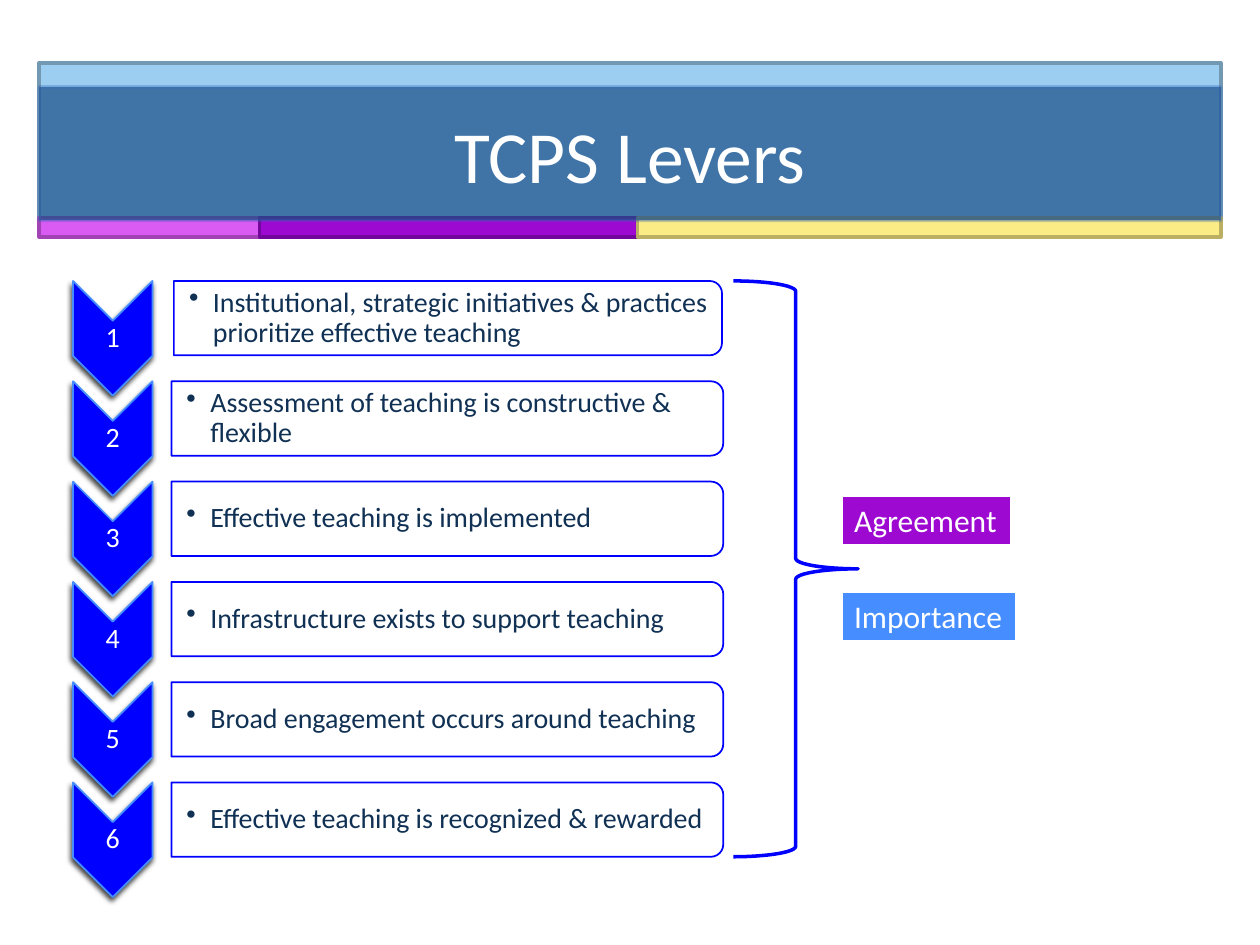
from lxml.etree import SubElement
from pptx import Presentation
from pptx.dml.color import RGBColor
from pptx.enum.shapes import MSO_SHAPE
from pptx.enum.text import MSO_ANCHOR, MSO_AUTO_SIZE, PP_ALIGN
from pptx.oxml.ns import qn
from pptx.util import Inches, Pt

TITLE = "TCPS Levers"
LEVERS = [
    "Institutional, strategic initiatives & practices prioritize effective teaching",
    "Assessment of teaching is constructive & flexible",
    "Effective teaching is implemented",
    "Infrastructure exists to support teaching",
    "Broad engagement occurs around teaching",
    "Effective teaching is recognized & rewarded",
]
# text, top, width, fill
RATINGS = [("Agreement", 3.93, 1.35, "9D09D1"), ("Importance", 4.69, 1.39, "468EFF")]
# width, fill, line
STRIPES = [(1.75, "DA5AF4", "A143B5"), (3, "9D09D1", "74079B"), (4.63, "FBEC85", "BAAF62")]

BLUE, WHITE, NAVY = "0000FF", "FFFFFF", "103154"
BANNER_LEFT, BANNER_WIDTH = 0.31, 9.38
FIRST_TOP, LAST_TOP = 2.23, 6.21
PITCH = (LAST_TOP - FIRST_TOP) / (len(LEVERS) - 1)
CHEVRON_LEFT, CHEVRON_WIDTH, CHEVRON_HEIGHT = 0.58, 0.63, 0.91
BAR_RIGHT, BAR_HEIGHT = 5.74, 0.59
SMALL_INSETS = (0.01, 0.01, 0.01, 0.01)


def rgb(color):
    return RGBColor.from_string(color)


def set_alpha(fill_element, percent):
    color = next(fill_element.iter(qn("a:srgbClr")))
    SubElement(color, qn("a:alpha"), val=str(percent * 1000))


def add_box(kind, left, top, width, height, fill=None, line=BLUE, weight=2,
            fill_alpha=None, line_alpha=None, quarter_turn=False):
    """Place a preset shape; the box is the one seen after any quarter turn."""
    if quarter_turn:
        left, top = left + (width - height) / 2, top + (height - width) / 2
        width, height = height, width
    box = slide.shapes.add_shape(kind, Inches(left), Inches(top), Inches(width), Inches(height))
    box.shadow.inherit = False
    box.rotation = 90 if quarter_turn else 0
    if fill:
        box.fill.solid()
        box.fill.fore_color.rgb = rgb(fill)
    else:
        box.fill.background()
    box.line.color.rgb = rgb(line)
    box.line.width = Pt(weight)
    properties = box.element.spPr
    if fill_alpha:
        set_alpha(properties.find(qn("a:solidFill")), fill_alpha)
    if line_alpha:
        set_alpha(properties.find(qn("a:ln")), line_alpha)
    return box


def add_shadow(box):
    effects = box.element.spPr.find(qn("a:effectLst"))
    shadow = SubElement(effects, qn("a:outerShdw"), blurRad=str(Pt(3)), dist=str(Pt(2)),
                        dir=str(110 * 60000), rotWithShape="0")
    color = SubElement(shadow, qn("a:srgbClr"), val="000000")
    SubElement(color, qn("a:alpha"), val="75000")


def write(box, text, size=16, color=WHITE, align=PP_ALIGN.LEFT, anchor=MSO_ANCHOR.MIDDLE,
          insets=(0.1, 0.05, 0.1, 0.05), spacing=None, bullet=False, wrap=True):
    frame = box.text_frame
    frame.word_wrap = wrap
    frame.vertical_anchor = anchor
    frame.margin_left, frame.margin_top, frame.margin_right, frame.margin_bottom = map(Inches, insets)
    paragraph = frame.paragraphs[0]
    paragraph.alignment = align
    paragraph.line_spacing = spacing
    run = paragraph.add_run()
    run.text = text
    run.font.name = "Calibri"
    run.font.size = Pt(size)
    run.font.color.rgb = rgb(color)
    if bullet:
        properties = paragraph._p.get_or_add_pPr()
        properties.set("marL", str(Inches(0.19)))
        properties.set("indent", str(Inches(-0.19)))
        SubElement(properties, qn("a:buChar"), char="•")


def add_label(left, top, width, height, text, **style):
    label = slide.shapes.add_textbox(Inches(left), Inches(top), Inches(width), Inches(height))
    write(label, text, spacing=0.9, **style)


def add_banner():
    add_box(MSO_SHAPE.RECTANGLE, BANNER_LEFT, 0.5, BANNER_WIDTH, 1.24, "9CCEF1", "7398B2")
    left = BANNER_LEFT
    for width, fill, line in STRIPES:
        add_box(MSO_SHAPE.RECTANGLE, left, 1.73, width, 0.15, fill, line)
        left += width
    title = add_box(MSO_SHAPE.RECTANGLE, BANNER_LEFT, 0.69, BANNER_WIDTH, 1.06, "1A4F88", "3469BD",
                    fill_alpha=70, line_alpha=30)
    write(title, TITLE, size=42, align=PP_ALIGN.CENTER)


def add_lever(index, text):
    top = FIRST_TOP + index * PITCH
    chevron = add_box(MSO_SHAPE.CHEVRON, CHEVRON_LEFT, top, CHEVRON_WIDTH, CHEVRON_HEIGHT,
                      BLUE, "468EFF", 1, quarter_turn=True)
    add_shadow(chevron)
    add_label(CHEVRON_LEFT, top + 0.32, CHEVRON_WIDTH, 0.27, str(index + 1),
              align=PP_ALIGN.CENTER, insets=SMALL_INSETS)
    bar_left, bar_right = (1.38, BAR_RIGHT - 0.01) if index == 0 else (1.36, BAR_RIGHT)
    bar_width = bar_right - bar_left
    add_box(MSO_SHAPE.ROUND_2_SAME_RECTANGLE, bar_left, top, bar_width, BAR_HEIGHT,
            WHITE, BLUE, 1, fill_alpha=90, quarter_turn=True)
    add_label(bar_left, top + 0.03, bar_width - 0.03, BAR_HEIGHT - 0.06, text, color=NAVY,
              insets=(0.12, 0.01, 0.01, 0.01), bullet=True)


presentation = Presentation()
presentation.slide_width, presentation.slide_height = Inches(10), Inches(7.5)
slide = presentation.slides.add_slide(presentation.slide_layouts[6])

add_banner()
for index, lever in enumerate(LEVERS):
    add_lever(index, lever)
add_box(MSO_SHAPE.RIGHT_BRACE, 5.82, FIRST_TOP, 0.99, 4.57)
for text, top, width, fill in RATINGS:
    rating = add_box(MSO_SHAPE.RECTANGLE, 6.68, top, width, 0.4, fill, WHITE)
    write(rating, text, size=18, anchor=MSO_ANCHOR.TOP, wrap=False)
    rating.text_frame.auto_size = MSO_AUTO_SIZE.SHAPE_TO_FIT_TEXT

presentation.save("out.pptx")
